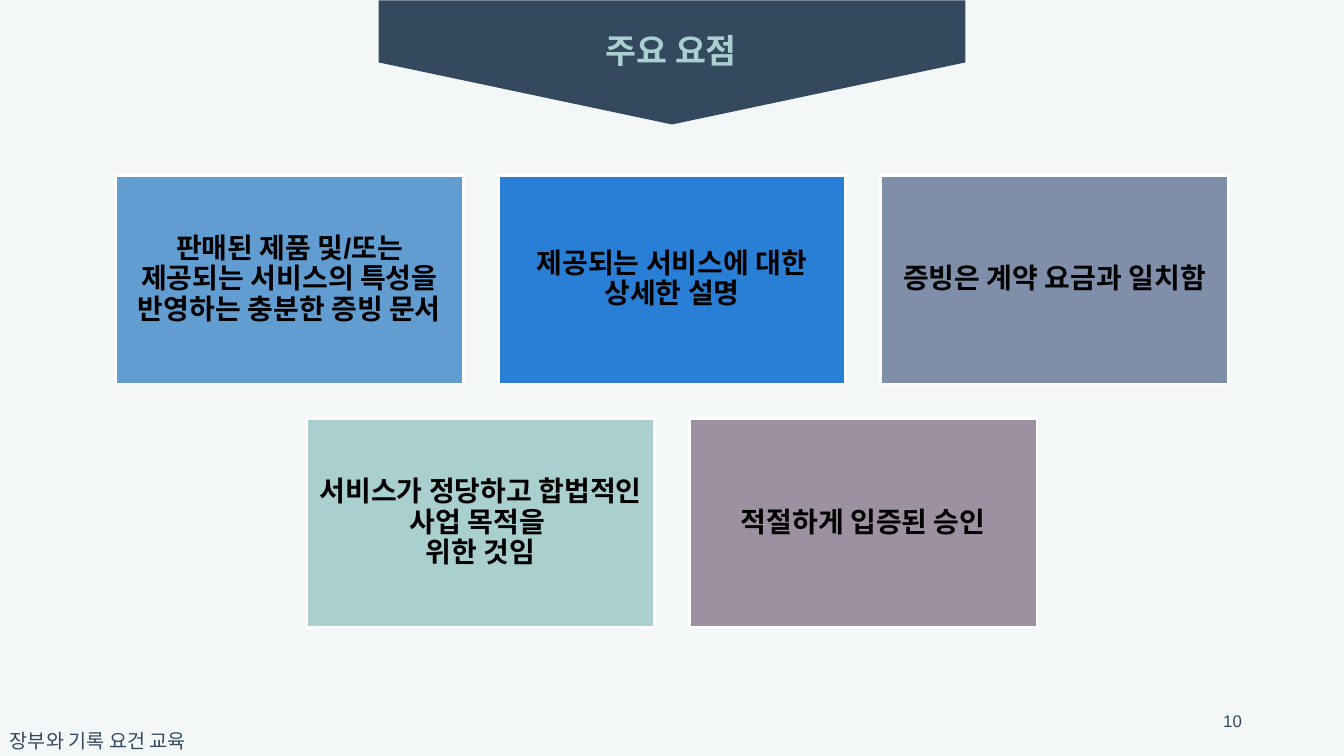
from pptx import Presentation
from pptx.dml.color import RGBColor
from pptx.enum import shapes, text
from pptx.util import Pt

HUES = {
    "page": "F4F7F7", "navy": "34495E", "mint": "AACFD0",
    "white": "FFFFFF", "black": "000000",
    "sky": "629DD1", "blue": "297FD5", "slate": "7F8FA9",
    "sage": "AACFCF", "mauve": "9D90A0",
}
WIDE, HIGH = 960, 540
CARD_W, CARD_H, GAP, TOP = 248.4, 149.04, 24.84, 125.3
ROWS = [
    [("판매된 제품 및/또는 제공되는 서비스의 특성을 반영하는 충분한 증빙 문서", "sky"),
     ("제공되는 서비스에 대한 상세한 설명", "blue"),
     ("증빙은 계약 요금과 일치함", "slate")],
    [("서비스가 정당하고 합법적인 사업 목적을 \v위한 것임", "sage"),
     ("적절하게 입증된 승인", "mauve")],
]


def hue(name):
    return RGBColor.from_string(HUES[name])


def write(shape, words, size, color, align, bold=False,
          anchor=text.MSO_ANCHOR.TOP, pad=(7.2, 3.6)):
    """Fill a shape with one styled paragraph and return it."""
    frame = shape.text_frame
    frame.word_wrap = True
    frame.auto_size = text.MSO_AUTO_SIZE.NONE
    frame.vertical_anchor = anchor
    frame.margin_left = frame.margin_right = Pt(pad[0])
    frame.margin_top = frame.margin_bottom = Pt(pad[1])
    frame.text = words
    para = frame.paragraphs[0]
    para.alignment = align
    font = para.font
    font.name, font.size, font.bold = "Arial", Pt(size), bold
    font.color.rgb = hue(color)
    return para


def block(slide, kind, left, top, width, height, fill):
    shape = slide.shapes.add_shape(
        kind, Pt(left), Pt(top), Pt(width), Pt(height))
    shape.shadow.inherit = False
    shape.fill.solid()
    shape.fill.fore_color.rgb = hue(fill)
    shape.line.fill.background()
    return shape


def banner(slide, words):
    # Pentagon turned to point down, placed behind the title
    width, height, mid = 88.6, 419, 44.6
    flag = block(slide, shapes.MSO_SHAPE.PENTAGON, (WIDE - width) / 2,
                 mid - height / 2, width, height, "navy")
    flag.rotation = 90
    title = slide.shapes.title
    title._element.addprevious(flag._element)
    title.left, title.top = Pt(213.8), Pt(18)
    title.width, title.height = Pt(531.4), Pt(36)
    write(title, words, 24, "mint", text.PP_ALIGN.CENTER, True)


def card(slide, left, top, words, fill):
    box = block(slide, shapes.MSO_SHAPE.RECTANGLE,
                left, top, CARD_W, CARD_H, fill)
    box.line.color.rgb = hue("white")
    box.line.width = Pt(2)
    para = write(box, words, 20, "black", text.PP_ALIGN.CENTER, True,
                 text.MSO_ANCHOR.MIDDLE, (6, 6))
    para.line_spacing = 0.9
    para.space_after = Pt(7)


def label(slide, left, top, width, height, *style, **more):
    box = slide.shapes.add_textbox(
        Pt(left), Pt(top), Pt(width), Pt(height))
    write(box, *style, **more)


def main():
    deck = Presentation()
    deck.slide_width, deck.slide_height = Pt(WIDE), Pt(HIGH)
    slide = deck.slides.add_slide(deck.slide_layouts[5])
    slide.background.fill.solid()
    slide.background.fill.fore_color.rgb = hue("page")

    # Title
    banner(slide, "주요 요점")

    # Cards, each row centred on the slide
    for row, cards in enumerate(ROWS):
        count = len(cards)
        start = (WIDE - count * CARD_W - (count - 1) * GAP) / 2
        for col, (words, fill) in enumerate(cards):
            card(slide, start + col * (CARD_W + GAP),
                 TOP + row * (CARD_H + GAP), words, fill)

    # Footer and page number
    label(slide, 0, 517, 300, 24.5, "장부와 기록 요건 교육", 14, "navy",
          text.PP_ALIGN.LEFT)
    label(slide, 678.2, 500.4, 216, 28.8, "10", 12, "navy",
          text.PP_ALIGN.RIGHT, anchor=text.MSO_ANCHOR.MIDDLE)
    deck.save("out.pptx")


if __name__ == "__main__":
    main()
